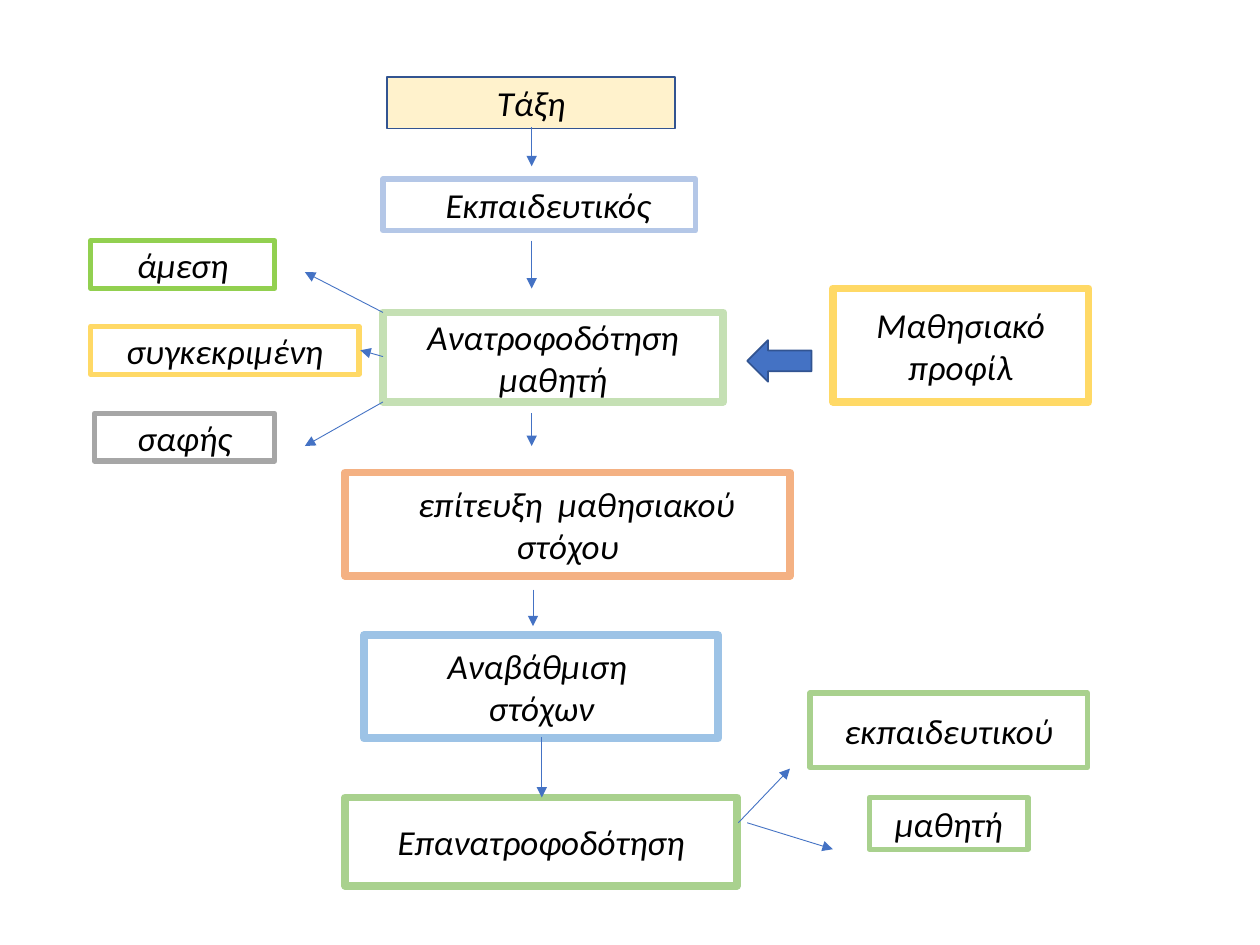
"""Build a flowchart slide on learner feedback and goal setting."""
from lxml import etree
from pptx import Presentation
from pptx.dml.color import RGBColor
from pptx.enum.shapes import MSO_CONNECTOR, MSO_SHAPE
from pptx.enum.text import MSO_ANCHOR, PP_ALIGN
from pptx.oxml.ns import qn
from pptx.util import Inches, Pt

RECT, LEFT_ARROW = MSO_SHAPE.RECTANGLE, MSO_SHAPE.LEFT_ARROW
STRAIGHT = MSO_CONNECTOR.STRAIGHT
MIDDLE, CENTER = MSO_ANCHOR.MIDDLE, PP_ALIGN.CENTER

COLORS = {
    "white": "FFFFFF", "black": "000000", "cream": "FFF2CC", "navy": "325491",
    "blue": "4472C4", "periwinkle": "B4C7E7", "sky": "9DC3E6", "mint": "C5E0B4",
    "green": "A9D18E", "lime": "92D050", "orange": "F4B183", "gold": "FFD966",
    "gray": "A6A6A6",
}
FONT = {"name": "Calibri", "size": Pt(20), "italic": True}

# paragraphs, (left, top, width, height), fill, outline, outline width, first-line indent
BOXES = [
    (["Τάξη"], (3.07, 0.61, 2.29, 0.41), "cream", "navy", 1, 0),
    (["Εκπαιδευτικός"], (3.04, 1.42, 2.48, 0.41), "white", "periwinkle", 3, 0.14),
    (["Ανατροφοδότηση μαθητή"], (3.04, 2.48, 2.7, 0.71), "white", "mint", 4.5, 0),
    (["επίτευξη  μαθησιακού στόχου"], (2.74, 3.75, 3.53, 0.82), "white", "orange", 4.5, 0.14),
    (["Αναβάθμιση ", "στόχων"], (2.89, 5.04, 2.81, 0.82), "white", "sky", 4.5, 0),
    (["Επανατροφοδότηση"], (2.74, 6.33, 3.11, 0.7), "white", "green", 4.5, 0),
    (["Μαθησιακό προφίλ"], (6.61, 2.29, 2.03, 0.9), "white", "gold", 4.5, 0),
    (["άμεση"], (0.72, 1.91, 1.46, 0.38), "white", "lime", 3, 0),
    (["συγκεκριμένη"], (0.72, 2.59, 2.13, 0.38), "white", "gold", 3, 0),
    (["σαφής"], (0.75, 3.28, 1.43, 0.38), "white", "gray", 3, 0),
    (["εκπαιδευτικού"], (6.43, 5.5, 2.2, 0.59), "white", "green", 3, 0),
    (["μαθητή"], (6.9, 6.33, 1.26, 0.41), "white", "green", 3, 0),
]
PROFILE_ARROW = (5.93, 2.7, 0.51, 0.33)
ARROWS = [
    (4.22, 1.01, 4.22, 1.32),
    (4.22, 1.91, 4.22, 2.29),
    (4.22, 3.28, 4.22, 3.54),
    (4.23, 4.68, 4.23, 4.97),
    (4.3, 5.85, 4.3, 6.33),
    (3.04, 2.48, 2.42, 2.16),
    (3.04, 2.83, 2.86, 2.78),
    (3.04, 3.19, 2.42, 3.54),
    (5.86, 6.53, 6.27, 6.1),
    (5.93, 6.53, 6.61, 6.74),
]


def rgb(name):
    return RGBColor.from_string(COLORS[name])


def add_shape(slide, kind, place, fill, outline, width):
    sp = slide.shapes.add_shape(kind, *map(Inches, place))
    sp.shadow.inherit = False
    sp.fill.solid()
    sp.fill.fore_color.rgb = rgb(fill)
    sp.line.color.rgb = rgb(outline)
    sp.line.width = Pt(width)
    return sp


def add_box(slide, paragraphs, place, fill, outline, width, indent):
    tf = add_shape(slide, RECT, place, fill, outline, width).text_frame
    tf.word_wrap = True
    tf.vertical_anchor = MIDDLE
    tf.text = "\n".join(paragraphs)
    for p in tf.paragraphs:
        p.alignment = CENTER
        if indent:
            p._p.get_or_add_pPr().set("indent", str(Inches(indent)))
        font = p.runs[0].font
        font.color.rgb = rgb("black")
        for key, value in FONT.items():
            setattr(font, key, value)


def add_arrow(slide, ends):
    line = slide.shapes.add_connector(STRAIGHT, *map(Inches, ends))
    line.line.color.rgb = rgb("blue")
    line.line.width = Pt(0.5)
    etree.SubElement(line.line._get_or_add_ln(), qn("a:tailEnd"), type="triangle")
    etree.SubElement(line._element.spPr, qn("a:effectLst"))


def main():
    prs = Presentation()
    prs.slide_width, prs.slide_height = Inches(10), Inches(7.5)
    slide = prs.slides.add_slide(prs.slide_layouts[6])
    for box in BOXES:
        add_box(slide, *box)
    add_shape(slide, LEFT_ARROW, PROFILE_ARROW, "blue", "navy", 1)
    for ends in ARROWS:
        add_arrow(slide, ends)
    prs.save("out.pptx")


if __name__ == "__main__":
    main()
